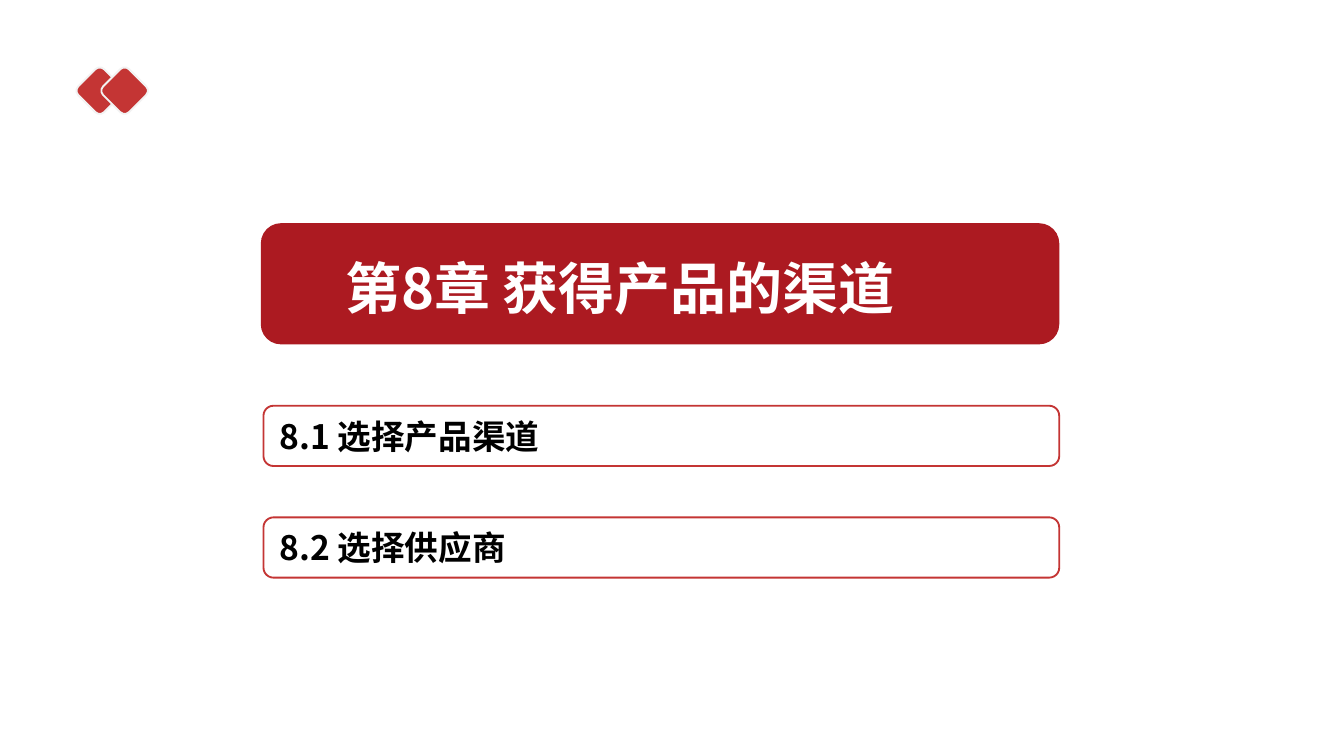
import pptx
import pptx.dml.color
import pptx.enum.shapes
import pptx.enum.text
import pptx.oxml
import pptx.oxml.ns
import pptx.util
from pptx.util import Cm

RGBColor = pptx.dml.color.RGBColor
RED = RGBColor(0xC4, 0x35, 0x34)
DARK_RED = RGBColor(0xAC, 0x1A, 0x21)
PALE_GREY = RGBColor(0xF2, 0xF2, 0xF2)
WHITE = RGBColor(0xFF, 0xFF, 0xFF)
BLACK = RGBColor(0x00, 0x00, 0x00)

FONT = "Noto Sans CJK SC"
SECTIONS = ["8.1 选择产品渠道", "8.2 选择供应商"]


def add_rounded_box(slide, left, top, width, height, fill, outline=None):
    box = slide.shapes.add_shape(
        pptx.enum.shapes.MSO_SHAPE.ROUNDED_RECTANGLE, left, top, width, height)
    box.shadow.inherit = False
    box.fill.solid()
    box.fill.fore_color.rgb = fill
    if outline is None:
        box.line.fill.background()
    else:
        box.line.color.rgb = outline
        box.line.width = pptx.util.Pt(1)
    return box


def set_label(shape, label, size, color):
    frame = shape.text_frame
    frame.text = label
    frame.word_wrap = True
    frame.auto_size = pptx.enum.text.MSO_AUTO_SIZE.NONE
    frame.vertical_anchor = pptx.enum.text.MSO_ANCHOR.MIDDLE
    paragraph = frame.paragraphs[0]
    paragraph.alignment = pptx.enum.text.PP_ALIGN.LEFT
    for run in paragraph.runs:
        run.font.size = pptx.util.Pt(size)
        run.font.bold = True
        run.font.color.rgb = color
        run.font.name = FONT
        # East Asian characters need their own typeface entry
        east_asian = pptx.oxml.parse_xml(
            f'<a:ea {pptx.oxml.ns.nsdecls("a")} typeface="{FONT}"/>')
        run.font._element.append(east_asian)


def add_diamonds(slide):
    for left in (Cm(1.54), Cm(2.01)):
        diamond = add_rounded_box(slide, left, Cm(1.37), Cm(0.69), Cm(0.69),
                                  RED, PALE_GREY)
        diamond.rotation = 45


def add_chapter_title(slide, label):
    banner = add_rounded_box(slide, Cm(4.93), Cm(4.22), Cm(15.09), Cm(2.29), DARK_RED)
    title = slide.shapes.title
    title.left, title.top = Cm(6.27), Cm(4.67)
    title.width, title.height = Cm(12.67), Cm(1.52)
    set_label(title, label, 30, WHITE)
    # Bring the title in front of its banner
    banner._element.addnext(title._element)


def add_sections(slide):
    for index, label in enumerate(SECTIONS):
        section = add_rounded_box(slide, Cm(4.98), Cm(7.67 + 2.11 * index),
                                  Cm(15.04), Cm(1.14), WHITE, RED)
        set_label(section, label, 18, BLACK)


def main():
    presentation = pptx.Presentation()
    presentation.slide_width = Cm(25.4)
    presentation.slide_height = Cm(14.29)
    title_only = presentation.slide_layouts[5]
    slide = presentation.slides.add_slide(title_only)

    add_diamonds(slide)
    add_chapter_title(slide, "第8章 获得产品的渠道")
    add_sections(slide)

    presentation.save("out.pptx")


if __name__ == "__main__":
    main()
